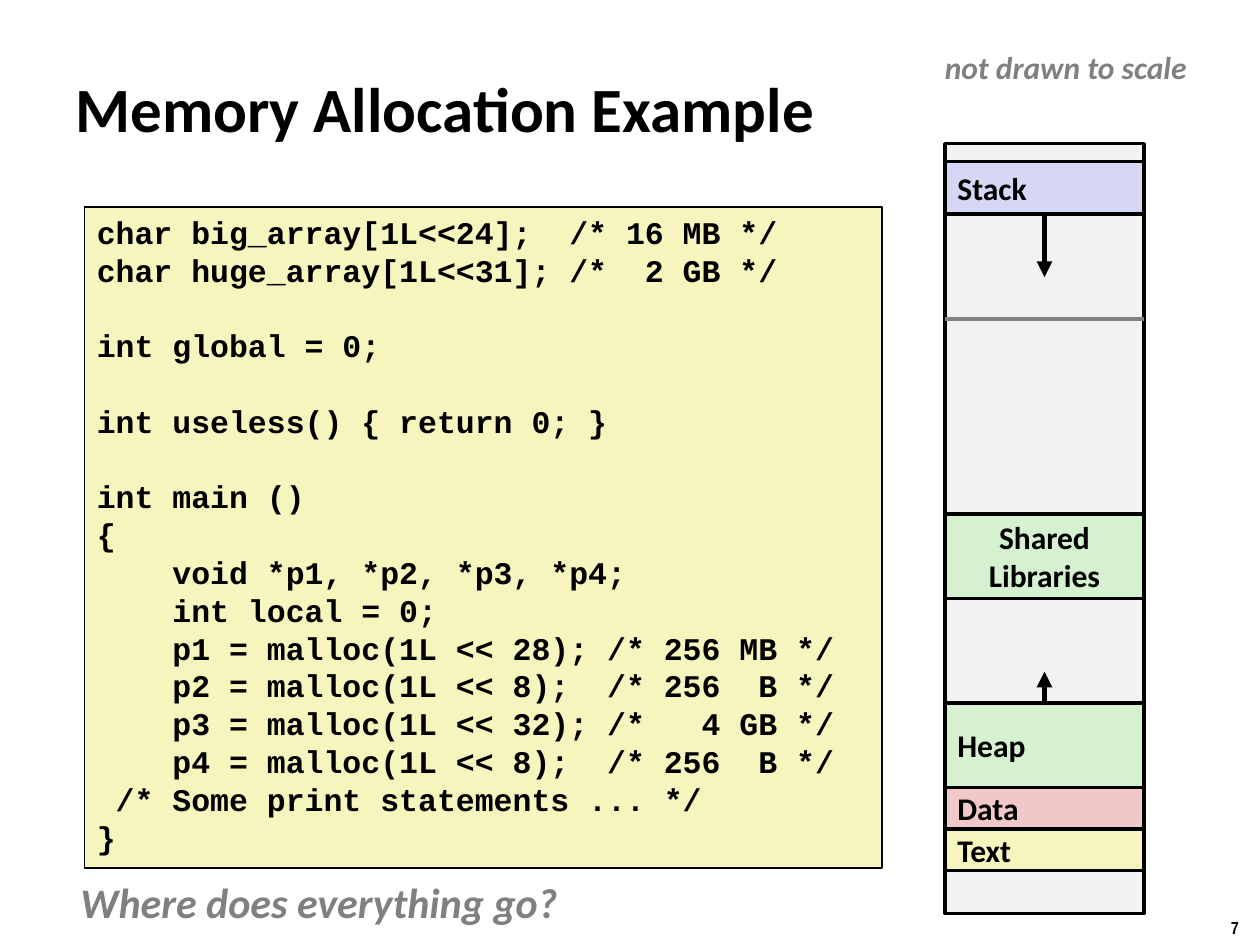
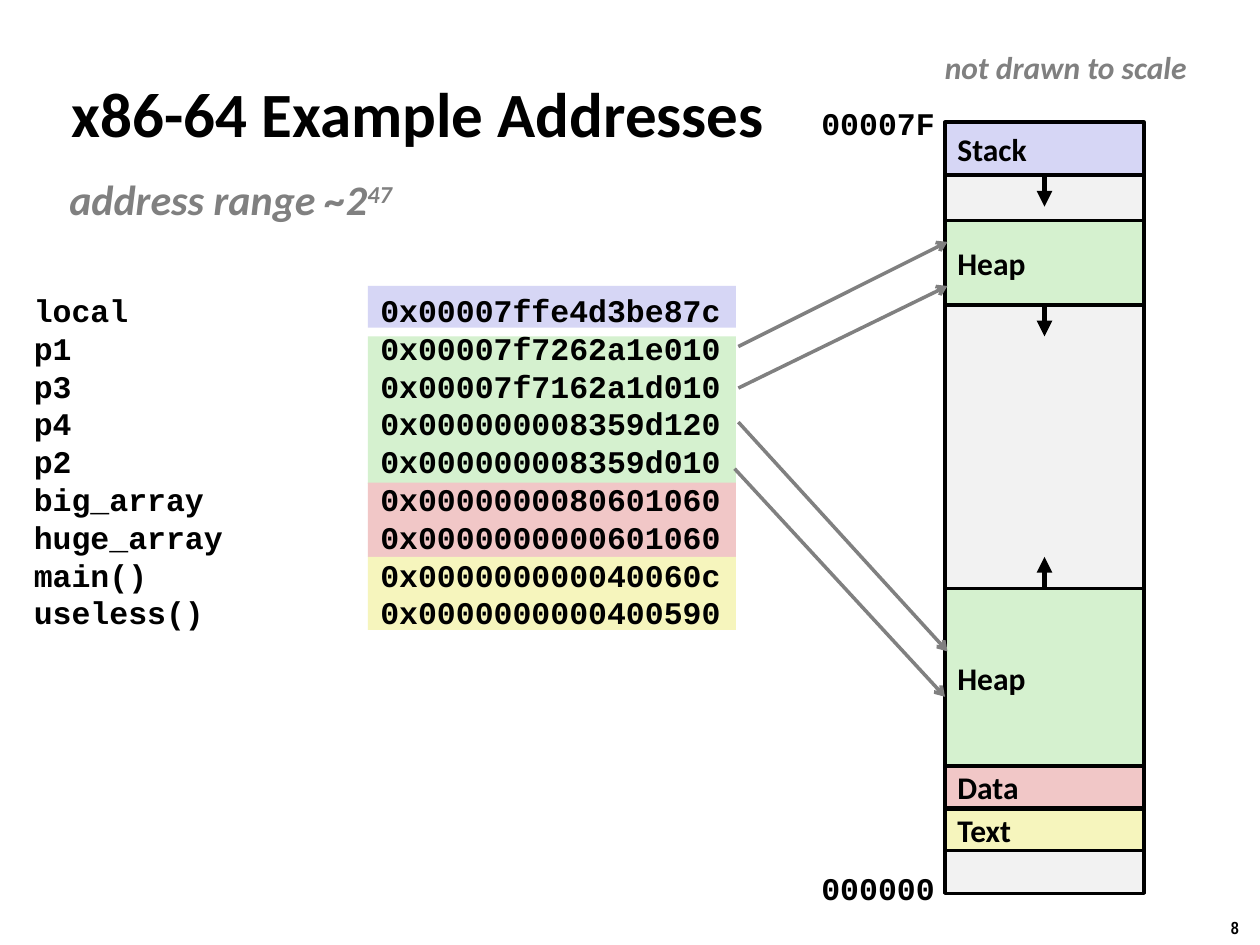
from dataclasses import dataclass
from typing import NamedTuple

from lxml import etree
from pptx import Presentation
from pptx.dml.color import RGBColor
from pptx.enum.shapes import MSO_CONNECTOR, MSO_SHAPE
from pptx.enum.text import MSO_ANCHOR, PP_ALIGN
from pptx.oxml.ns import qn
from pptx.util import Pt

PX = 9144  # EMU in one px, 100 px to the inch


class TextStyle(NamedTuple):
    font: str
    size: int
    color: str = "000000"
    italic: bool = False


@dataclass(frozen=True)
class Theme:
    ink: str = "000000"
    gray: str = "808080"
    unused: str = "F2F2F2"
    stack: str = "D6D6F5"
    heap: str = "D5F1CF"
    data: str = "F1C7C7"
    code: str = "F6F5BD"
    title: TextStyle = TextStyle("Calibri", 36)
    remark: TextStyle = TextStyle("Calibri", 24, "808080", True)
    caption: TextStyle = TextStyle("Calibri", 18, "808080", True)
    label: TextStyle = TextStyle("Calibri", 18)
    mono: TextStyle = TextStyle("Courier New", 18)
    number: TextStyle = TextStyle("Arial Narrow", 10)
    mono_pitch: float = 21.6


THEME = Theme()


def add_box(slide, area, text="", style=THEME.label, fill=None, border=0,
            middle=False, align=PP_ALIGN.LEFT, wrap=True, inset=10):
    """Add a filled rectangle, or a text box without fill; an empty line becomes space before the next."""
    place = [length * PX for length in area]
    if fill:
        box = slide.shapes.add_shape(MSO_SHAPE.RECTANGLE, *place)
        box.shadow.inherit = False
        box.fill.solid()
        box.fill.fore_color.rgb = RGBColor.from_string(fill)
        if border:
            box.line.color.rgb = RGBColor.from_string(THEME.ink)
            box.line.width = Pt(border)
        else:
            box.line.fill.background()
    else:
        box = slide.shapes.add_textbox(*place)
    frame = box.text_frame
    frame.word_wrap = wrap
    frame.margin_left = frame.margin_right = inset * PX
    frame.vertical_anchor = MSO_ANCHOR.MIDDLE if middle else MSO_ANCHOR.TOP
    paragraph, gap = frame.paragraphs[0], 0
    for line in text.split("\n") if text else []:
        if not line:
            gap += THEME.mono_pitch
            continue
        if paragraph.runs:
            paragraph = frame.add_paragraph()
        paragraph.alignment = align
        paragraph.space_before, gap = Pt(gap), 0
        if style == THEME.mono:
            paragraph.line_spacing = Pt(THEME.mono_pitch)
        # "^" starts a superscript run
        for index, piece in enumerate(line.split("^")):
            run = paragraph.add_run()
            run.text = piece
            run.font.name, run.font.size = style.font, Pt(style.size)
            run.font.bold, run.font.italic = True, style.italic
            run.font.color.rgb = RGBColor.from_string(style.color)
            if index:
                run._r.get_or_add_rPr().set("baseline", "30000")
    return box


def add_line(slide, start, end, color, width, head=None):
    line = slide.shapes.add_connector(
        MSO_CONNECTOR.STRAIGHT, *[length * PX for length in start + end])
    line.line.color.rgb = RGBColor.from_string(color)
    line.line.width = Pt(width)
    if head:
        etree.SubElement(line.line._get_or_add_ln(), qn("a:tailEnd"), type=head)
    etree.SubElement(line._element.spPr, qn("a:effectLst"))
    return line


prs = Presentation()
prs.slide_width, prs.slide_height = 1000 * PX, 750 * PX

SOURCE_CODE = """char big_array[1L<<24];  /* 16 MB */
char huge_array[1L<<31]; /*  2 GB */

int global = 0;

int useless() { return 0; }

int main ()
{
    void *p1, *p2, *p3, *p4;
    int local = 0;
    p1 = malloc(1L << 28); /* 256 MB */
    p2 = malloc(1L << 8);  /* 256  B */
    p3 = malloc(1L << 32); /*   4 GB */
    p4 = malloc(1L << 8);  /* 256  B */
 /* Some print statements ... */
}"""

ADDRESSES = [
    ("local", "0x00007ffe4d3be87c"),
    ("p1", "0x00007f7262a1e010"),
    ("p3", "0x00007f7162a1d010"),
    ("p4", "0x000000008359d120"),
    ("p2", "0x000000008359d010"),
    ("big_array", "0x0000000080601060"),
    ("huge_array", "0x0000000000601060"),
    ("main()", "0x000000000040060c"),
    ("useless()", "0x0000000000400590"),
]

# Memory column: left, width, height; regions are label, top, height, fill, growth.
# Growth is the arrow length: positive points down, negative points up.
MEMORY_LEFT, MEMORY_WIDTH, MEMORY_HEIGHT = 750, 158, 611
MEMORY_MIDDLE = MEMORY_LEFT + MEMORY_WIDTH // 2
PAGES = [
    ("7", "Memory Allocation Example", (50, 54, 749, 63), 114, [
        ("Stack", 128, 42, THEME.stack, 50),
        ("Shared\nLibraries", 408, 67, THEME.heap, 0),
        ("Heap", 558, 67, THEME.heap, -25),
        ("Data", 625, 33, THEME.data, 0),
        ("Text", 658, 33, THEME.code, 0),
    ]),
    ("8", "x86-64 Example Addresses", (47, 58, 719, 63), 98, [
        ("Stack", 97, 42, THEME.stack, 25),
        ("Heap", 175, 67, THEME.heap, 25),
        ("Heap", 467, 142, THEME.heap, -25),
        ("Data", 608, 33, THEME.data, 0),
        ("Text", 642, 33, THEME.code, 0),
    ]),
]

# Both slides: title, number, caption and memory column
slides = []
for number, title, title_area, memory_top, regions in PAGES:
    slide = prs.slides.add_slide(prs.slide_layouts[6])
    slides.append(slide)
    add_box(slide, (967, 723, 34, 27), number, THEME.number, wrap=False)
    add_box(slide, title_area, title, THEME.title, middle=True)
    add_box(slide, (740, 33, 213, 40), "not drawn to scale", THEME.caption, wrap=False)
    add_box(slide, (MEMORY_LEFT, memory_top, MEMORY_WIDTH, MEMORY_HEIGHT),
            fill=THEME.unused, border=2)
    for label, top, height, fill, growth in regions:
        region = add_box(slide, (MEMORY_LEFT, top, MEMORY_WIDTH, height), label,
                         fill=fill, border=2, middle=True,
                         align=PP_ALIGN.CENTER if "\n" in label else PP_ALIGN.LEFT)
        if growth:
            edge = top + height if growth > 0 else top
            arrow = add_line(slide, (MEMORY_MIDDLE, edge), (MEMORY_MIDDLE, edge + growth),
                             THEME.ink, 3, "triangle")
            arrow.begin_connect(region, 2 if growth > 0 else 0)

allocation, addresses = slides

# Memory Allocation Example
add_box(allocation, (67, 164, 633, 525), SOURCE_CODE, THEME.mono, THEME.code, border=1)
add_box(allocation, (54, 691, 402, 51), "Where does everything go?", THEME.remark, wrap=False)
add_line(allocation, (MEMORY_LEFT, 253), (MEMORY_LEFT + MEMORY_WIDTH, 253), THEME.gray, 2)

# x86-64 Example Addresses
for top, height, fill in [(227, 33, THEME.stack), (267, 117, THEME.heap),
                          (383, 59, THEME.data), (442, 58, THEME.code)]:
    add_box(addresses, (292, top, 292, height), fill=fill)
address_list = add_box(addresses, (17, 226, 617, 282),
                       "\n".join(f"{name}\t{address}" for name, address in ADDRESSES),
                       THEME.mono)
for entry in address_list.text_frame.paragraphs:
    tabs = etree.SubElement(entry._p.get_or_add_pPr(), qn("a:tabLst"))
    etree.SubElement(tabs, qn("a:tab"), pos=str(275 * PX), algn="l")
add_box(addresses, (50, 133, 271, 51), "address range ~2^47", THEME.remark,
        wrap=False, inset=5)
for top, limit in [(78, "00007F"), (685, "000000")]:
    add_box(addresses, (642, top, 111, 40), limit, THEME.mono, wrap=False)
for pointer, target in [((586, 275), (752, 192)), ((586, 308), (752, 227)),
                        ((586, 335), (752, 517)), ((583, 372), (750, 553))]:
    add_line(addresses, pointer, target, THEME.gray, 2, "arrow")

prs.save("out.pptx")
